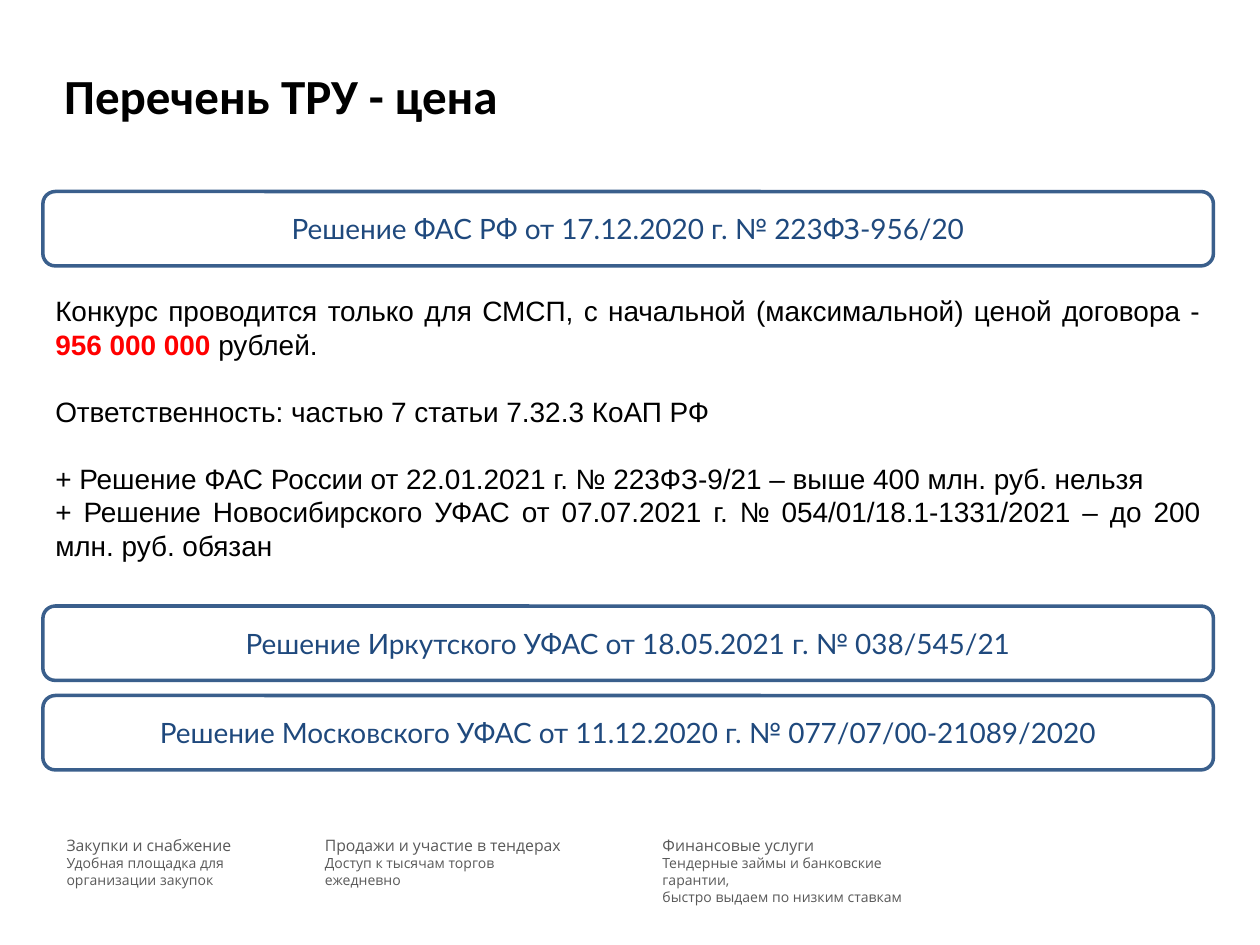
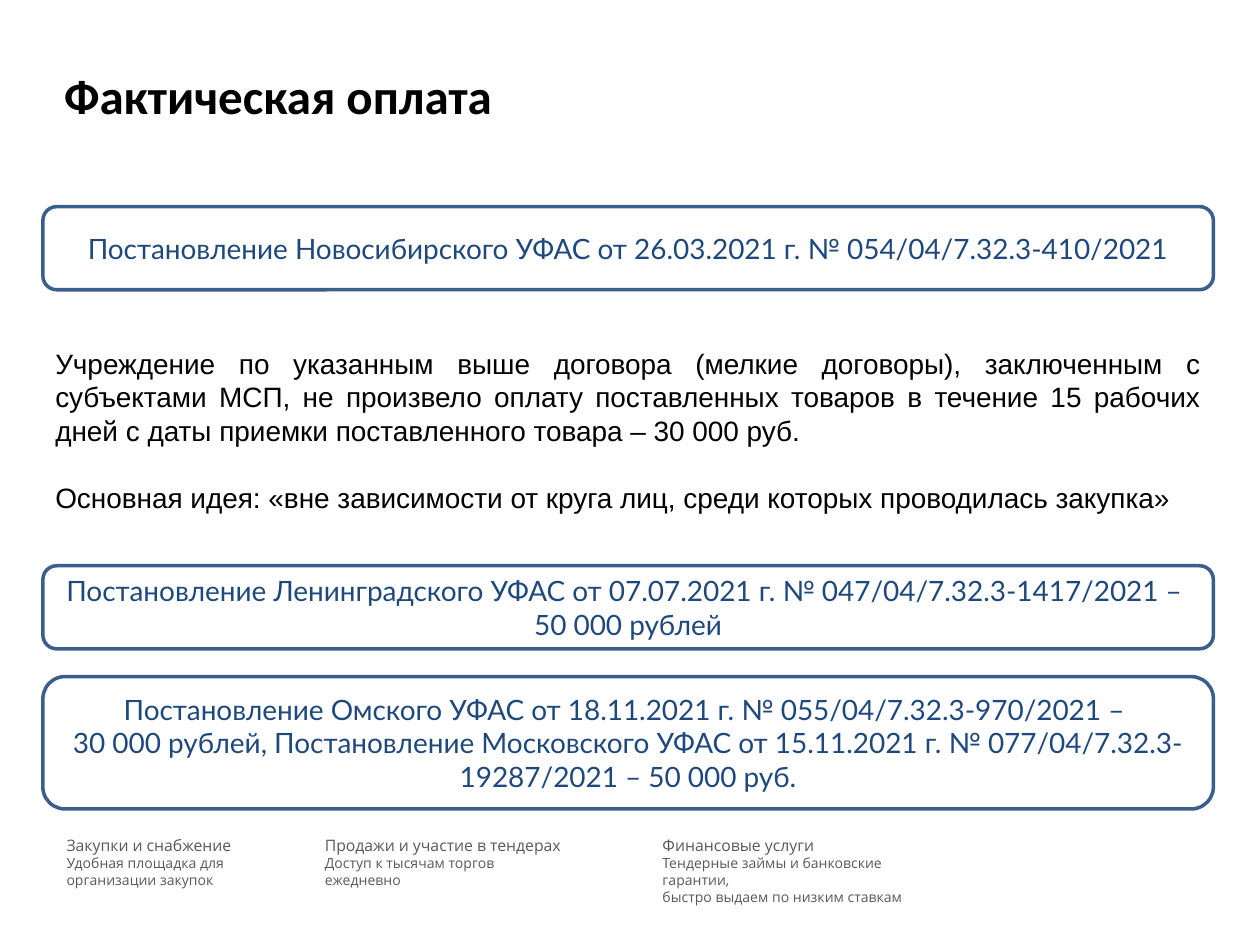
from pptx import Presentation
from pptx.dml.color import RGBColor
from pptx.enum.shapes import MSO_SHAPE
from pptx.enum.text import MSO_ANCHOR, PP_ALIGN
from pptx.util import Inches, Pt

BLACK, RED, GREY = "000000", "FF0000", "595959"
NAVY, STEEL = "1F497D", "3A5F8C"
LEFT, WIDTH = 0.34, 9.29
BODY_LINE = Pt(19.2)

FOOTER = [
    (0.43, 1.57, ["Закупки и снабжение", "Удобная площадка для организации закупок"]),
    (2.48, 2.13, ["Продажи и участие в тендерах", "Доступ к тысячам торгов ежедневно"]),
    (5.16, 2.44, ["Финансовые услуги", "Тендерные займы и банковские гарантии,",
                  "быстро выдаем по низким ставкам"]),
]

# Decisions: top, height, lines. Body: (gap above, [(text, is key figure)]).
SLIDES = [
    {
        "title": "Перечень ТРУ - цена",
        "decisions": [
            (1.52, 0.59, ["Решение ФАС РФ от 17.12.2020 г. № 223ФЗ-956/20"]),
            (4.81, 0.59, ["Решение Иркутского УФАС от 18.05.2021 г. № 038/545/21"]),
            (5.52, 0.59, ["Решение Московского УФАС от 11.12.2020 г. № 077/07/00-21089/2020"]),
        ],
        "body_top": 2.28,
        "body_height": 2.52,
        "body": [
            (False, [("Конкурс проводится только для СМСП, с начальной (максимальной) "
                      "ценой договора - ", False),
                     ("956 000 000 ", True), ("рублей.", False)]),
            (True, [("Ответственность: частью 7 статьи 7.32.3 КоАП РФ", False)]),
            (True, [("+ Решение ФАС России от 22.01.2021 г. № 223ФЗ-9/21 – "
                     "выше 400 млн. руб. нельзя", False)]),
            (False, [("+ Решение Новосибирского УФАС от 07.07.2021 г. "
                      "№ 054/01/18.1-1331/2021 – до 200 млн. руб. обязан", False)]),
        ],
    },
    {
        "title": "Фактическая оплата",
        "decisions": [
            (1.64, 0.66, ["Постановление Новосибирского УФАС от 26.03.2021 г. "
                          "№ 054/04/7.32.3-410/2021"]),
            (4.49, 0.66, ["Постановление Ленинградского УФАС от 07.07.2021 г. "
                          "№ 047/04/7.32.3-1417/2021 – ", "50 000 рублей"]),
            (5.37, 1.05, ["Постановление Омского УФАС от 18.11.2021 г. "
                          "№ 055/04/7.32.3-970/2021 – ",
                          "30 000 рублей, Постановление Московского УФАС от 15.11.2021 г. "
                          "№ 077/04/7.32.3-19287/2021 – 50 000 руб."]),
        ],
        "body_top": 2.7,
        "body_height": 1.75,
        "body": [
            (False, [("Учреждение по указанным выше договора (мелкие договоры), заключенным "
                      "с субъектами МСП, не произвело оплату поставленных товаров в течение "
                      "15 рабочих дней с даты приемки поставленного товара – 30 000 руб.",
                      False)]),
            (True, [("Основная идея: «вне зависимости от круга лиц, среди которых "
                     "проводилась закупка»", False)]),
        ],
    },
]


def add_run(paragraph, text, font, size, color, bold=False):
    run = paragraph.add_run()
    run.text = text
    run.font.name = font
    run.font.size = Pt(size)
    run.font.bold = bold
    run.font.color.rgb = RGBColor.from_string(color)


def next_paragraph(frame, index, align):
    """Return the frame's first paragraph for index 0, else a new one."""
    paragraph = frame.add_paragraph() if index else frame.paragraphs[0]
    paragraph.alignment = align
    return paragraph


prs = Presentation()
prs.slide_width, prs.slide_height = Inches(10), Inches(7.5)

for content in SLIDES:
    slide = prs.slides.add_slide(prs.slide_layouts[6])

    for left, width, lines in FOOTER:
        service = slide.shapes.add_textbox(Inches(left), Inches(6.51),
                                           Inches(width), Inches(0.75)).text_frame
        service.word_wrap = True
        for i, line in enumerate(lines):
            paragraph = next_paragraph(service, i, PP_ALIGN.LEFT)
            if i == 0:
                paragraph.line_spacing = 1.5
            add_run(paragraph, line, "Open Sans", 8 if i else 9, GREY)

    body = slide.shapes.add_textbox(Inches(LEFT), Inches(content["body_top"]), Inches(WIDTH),
                                    Inches(content["body_height"])).text_frame
    body.word_wrap = True
    for i, (gap_above, parts) in enumerate(content["body"]):
        paragraph = next_paragraph(body, i, PP_ALIGN.JUSTIFY)
        paragraph.line_spacing = BODY_LINE
        if gap_above:
            paragraph.space_before = BODY_LINE
        for text, is_key in parts:
            add_run(paragraph, text, "Arial", 16, RED if is_key else BLACK, is_key)

    title = slide.shapes.add_textbox(Inches(0.51), Inches(0.42),
                                     Inches(7), Inches(0.72)).text_frame
    title.word_wrap = True
    title.vertical_anchor = MSO_ANCHOR.MIDDLE
    title.margin_left = title.margin_right = title.margin_top = title.margin_bottom = 0
    paragraph = next_paragraph(title, 0, PP_ALIGN.JUSTIFY)
    paragraph.line_spacing = 0.93
    add_run(paragraph, content["title"], "Calibri", 28, BLACK, True)

    for top, height, lines in content["decisions"]:
        decision = slide.shapes.add_shape(MSO_SHAPE.ROUNDED_RECTANGLE, Inches(LEFT), Inches(top),
                                          Inches(WIDTH), Inches(height))
        decision.shadow.inherit = False
        decision.fill.background()
        decision.line.color.rgb = RGBColor.from_string(STEEL)
        decision.line.width = Pt(2)
        decision.text_frame.word_wrap = True
        decision.text_frame.vertical_anchor = MSO_ANCHOR.MIDDLE
        for i, line in enumerate(lines):
            paragraph = next_paragraph(decision.text_frame, i, PP_ALIGN.CENTER)
            add_run(paragraph, line, "Lato", 16, NAVY)

prs.save("out.pptx")
